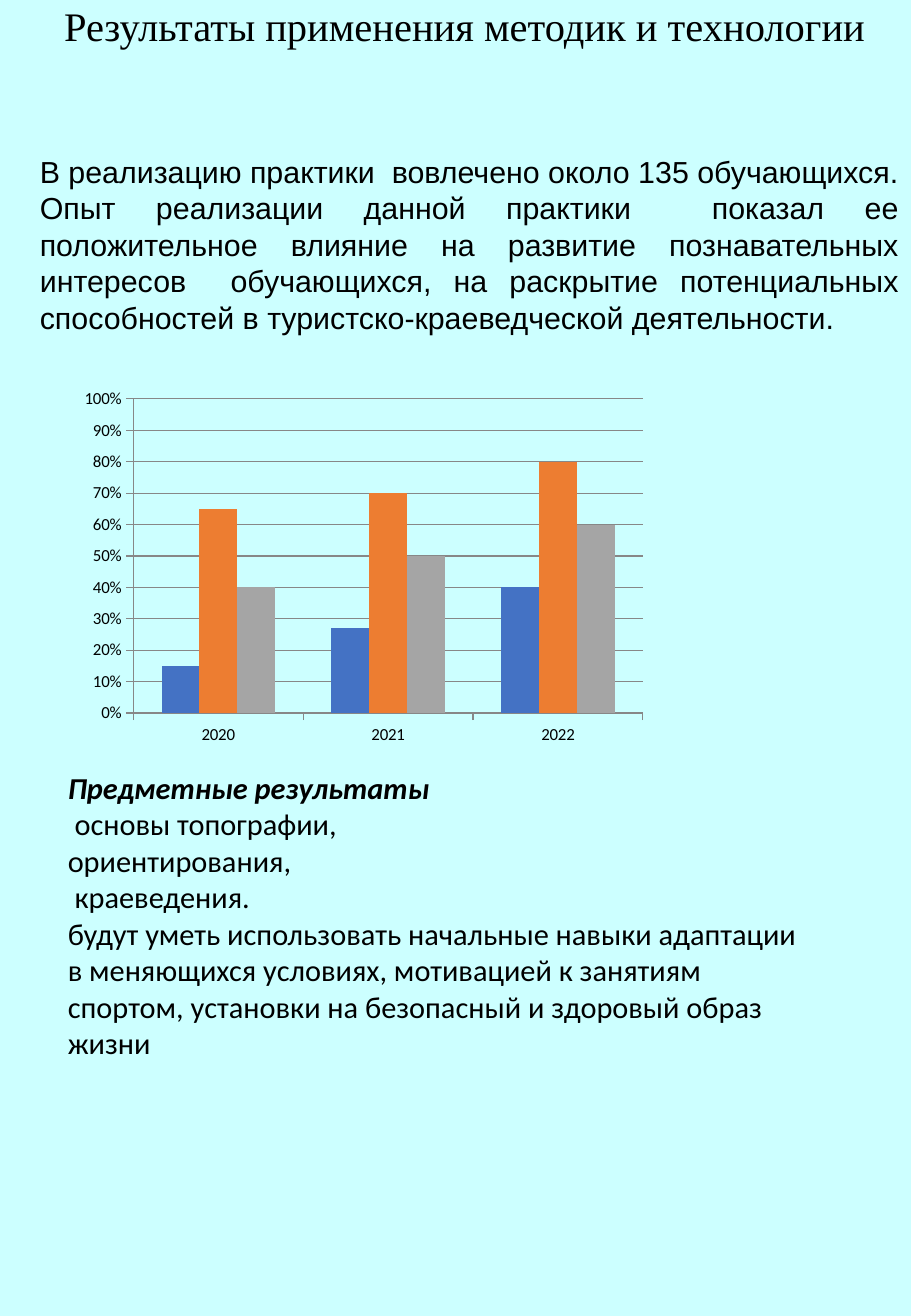
from dataclasses import dataclass

from lxml import etree
from pptx import Presentation
from pptx.chart.data import CategoryChartData
from pptx.dml.color import RGBColor
from pptx.enum.chart import XL_CHART_TYPE as ChartType, XL_TICK_MARK as Tick
from pptx.enum.text import MSO_ANCHOR as Anchor, MSO_AUTO_SIZE as AutoSize, PP_ALIGN as Align
from pptx.oxml import parse_xml
from pptx.oxml.ns import nsdecls, qn
from pptx.util import Inches, Pt


@dataclass(frozen=True)
class Theme:
    """Colours, fonts and type sizes of the slide."""
    panel: RGBColor = RGBColor(0xCC, 0xFF, 0xFF)
    ink: RGBColor = RGBColor(0, 0, 0)
    axis: RGBColor = RGBColor(0x87, 0x87, 0x87)
    bars: tuple = tuple(map(RGBColor.from_string, ("4472C4", "ED7D31", "A5A5A5")))
    title_font: str = "Times New Roman"
    intro_font: str = "Arial"
    base_font: str = "Calibri"
    title: Pt = Pt(24)
    body: Pt = Pt(18)
    chart: Pt = Pt(10)


THEME = Theme()
TITLE = "Результаты применения методик и технологии"
INTRO = (
    "В реализацию практики  вовлечено около 135 обучающихся.",
    "Опыт реализации данной практики  показал ее положительное влияние на развитие "
    "познавательных интересов  обучающихся, на раскрытие потенциальных способностей "
    "в туристско-краеведческой деятельности.",
)
OUTCOMES = (
    "Предметные результаты",
    " основы топографии,",
    "ориентирования,",
    " краеведения.",
    "будут уметь использовать начальные навыки адаптации в меняющихся условиях, "
    "мотивацией к занятиям спортом, установки на безопасный и здоровый образ жизни",
)
YEARS = ("2020", "2021", "2022")
SHARES = {
    "Series 1": (0.15, 0.27, 0.4),
    "Series 2": (0.65, 0.7, 0.8),
    "Series 3": (0.4, 0.5, 0.6),
}
PLOT_LAYOUT = {"x": 0.115, "y": 0.089, "w": 0.628, "h": 0.786}


def set_attrs(obj, **values):
    """Set each named attribute on an object."""
    for name, value in values.items():
        setattr(obj, name, value)


def style_font(font, name, size, **extra):
    """Apply a typeface, a size and the ink colour to a font."""
    set_attrs(font, name=name, size=size, **extra)
    font.color.rgb = THEME.ink


def place(sp, left, top, width, height):
    """Position a shape by lengths in inches."""
    set_attrs(sp, left=Inches(left), top=Inches(top),
              width=Inches(width), height=Inches(height))


def add_title(s):
    """Format the title placeholder as the coloured panel with its heading."""
    sp = s.shapes.title
    place(sp, 0, 0, 7.65, 10.83)
    sp.fill.solid()
    sp.fill.fore_color.rgb = THEME.panel
    tf = sp.text_frame
    tf.text = TITLE
    set_attrs(tf, word_wrap=True, auto_size=AutoSize.NONE, vertical_anchor=Anchor.TOP)
    p = tf.paragraphs[0]
    set_attrs(p, alignment=Align.CENTER, line_spacing=0.9)
    style_font(p.runs[0].font, THEME.title_font, THEME.title)


def add_text(s, box, lines, font, align=Align.LEFT):
    """Add a wrapped text box with one paragraph per line and return its paragraphs."""
    tf = s.shapes.add_textbox(*map(Inches, box)).text_frame
    tf.word_wrap = True
    tf.text = "\n".join(lines)
    for p in tf.paragraphs:
        p.alignment = align
        style_font(p.runs[0].font, font, THEME.body)
    return tf.paragraphs


def set_plot_layout(chart):
    """Fix the inner plot area to fractions of the chart space."""
    plot_area = chart.plots[0]._element.getparent()
    for old in plot_area.findall(qn("c:layout")):
        plot_area.remove(old)
    layout = parse_xml(f"<c:layout {nsdecls('c')}><c:manualLayout/></c:layout>")
    values = {"layoutTarget": "inner", "xMode": "edge", "yMode": "edge", **PLOT_LAYOUT}
    for tag, value in values.items():
        etree.SubElement(layout[0], qn(f"c:{tag}")).set("val", str(value))
    plot_area.insert(0, layout)


def add_chart(s, box):
    """Add the clustered columns of yearly shares."""
    data = CategoryChartData(number_format="0%")
    data.categories = YEARS
    for name, values in SHARES.items():
        data.add_series(name, values)
    chart = s.shapes.add_chart(ChartType.COLUMN_CLUSTERED, *map(Inches, box), data).chart
    set_attrs(chart, has_legend=False, has_title=False)
    style_font(chart.font, THEME.base_font, THEME.chart)
    plot = chart.plots[0]
    set_attrs(plot, gap_width=150, overlap=0, vary_by_categories=False)
    for series, colour in zip(plot.series, THEME.bars):
        series.format.fill.solid()
        series.format.fill.fore_color.rgb = colour
    shares = chart.value_axis
    set_attrs(shares, minimum_scale=0, maximum_scale=1, major_unit=0.1,
              has_major_gridlines=True)
    set_attrs(shares.tick_labels, number_format="0%", number_format_is_linked=False)
    for axis in (chart.category_axis, shares):
        axis.major_tick_mark = Tick.OUTSIDE
    for part in (chart.category_axis, shares, shares.major_gridlines):
        part.format.line.color.rgb = THEME.axis
        part.format.line.width = Pt(0.75)
    set_plot_layout(chart)


def main():
    """Build the results slide and save it."""
    prs = Presentation()
    set_attrs(prs, slide_width=Inches(7.5), slide_height=Inches(10.83))
    s = prs.slides.add_slide(prs.slide_layouts[5])
    add_title(s)
    add_chart(s, (0.33, 2.99, 6.68, 3.29))
    add_text(s, (0.23, 1.21, 7.27, 1.6), INTRO, THEME.intro_font, Align.JUSTIFY)
    heading = add_text(s, (0.46, 6.28, 6.37, 2.52), OUTCOMES, THEME.base_font)[0]
    set_attrs(heading.runs[0].font, bold=True, italic=True)
    prs.save("out.pptx")


if __name__ == "__main__":
    main()
